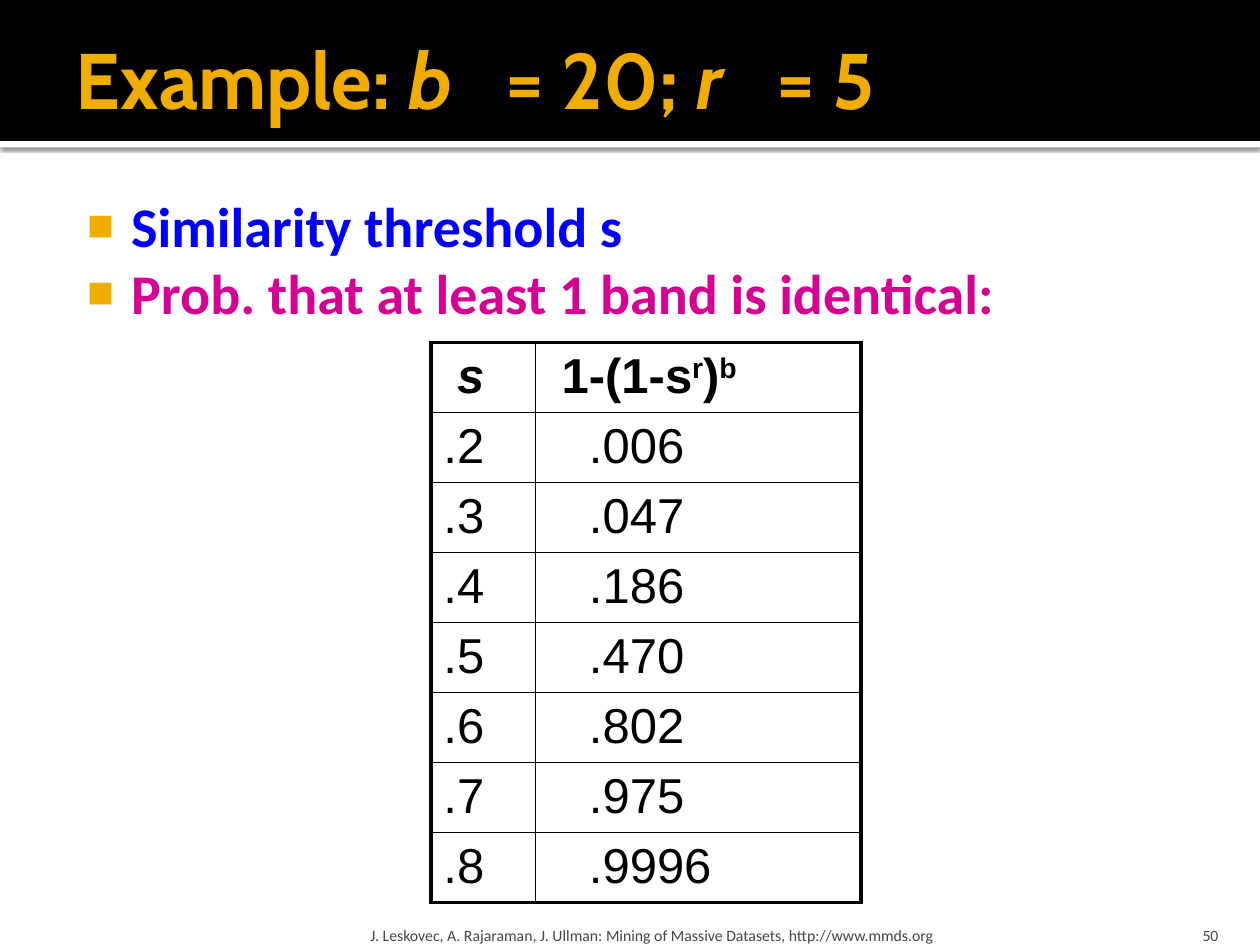
from lxml import etree
from pptx import Presentation
from pptx.dml.color import RGBColor
from pptx.enum import shapes, text
from pptx.oxml.ns import qn
from pptx.util import Pt

GOLD = RGBColor(0xF0, 0xAD, 0x00)
BLUE = RGBColor(0x00, 0x00, 0xFF)
MAGENTA = RGBColor(0xD6, 0x00, 0x93)
GRAY = RGBColor(0x45, 0x45, 0x45)
BLACK = RGBColor(0x00, 0x00, 0x00)
WHITE = RGBColor(0xFF, 0xFF, 0xFF)

HEADING = [("Example: ", False), ("b", True), (" ", False), (" = 20; ", False),
           ("r", True), (" ", False), (" = 5", False)]
HEADING_GAP = 10
BULLETS = [("Similarity threshold s", BLUE),
           ("Prob. that at least 1 band is identical:", MAGENTA)]
FORMULA = [("1-(1-s", False), ("r", True), (")", False), ("b", True)]
PROBABILITIES = [(".2", ".006"), (".3", ".047"), (".4", ".186"), (".5", ".470"),
                 (".6", ".802"), (".7", ".975"), (".8", ".9996")]
FOOTERS = [("J. Leskovec, A. Rajaraman, J. Ullman: Mining of Massive Datasets, "
            "http://www.mmds.org", 208, 433.5, 3.6, text.PP_ALIGN.LEFT),
           ("50", 645.8, 57.6, 7.2, text.PP_ALIGN.RIGHT)]

BAND_HEIGHT, STRIP_HEIGHT = 80.6, 3.6
TABLE_LEFT, TABLE_TOP, ROW_HEIGHT = 246.2, 195.8, 40
COLUMN_WIDTHS = (59.8, 186)
CELL_MARGIN, INDENT_STEP = 7.2, 7.8
THIN, THICK = 1, 2.25


def place(part, left, top, width, height):
    part.left, part.top, part.width, part.height = map(Pt, (left, top, width, height))


def set_frame(frame, anchor, left, top, right, bottom):
    frame.word_wrap = True
    frame.auto_size = text.MSO_AUTO_SIZE.NONE
    frame.vertical_anchor = anchor
    frame.margin_left, frame.margin_top = Pt(left), Pt(top)
    frame.margin_right, frame.margin_bottom = Pt(right), Pt(bottom)


def set_font(font, name, size, color, bold=False):
    font.name, font.size, font.bold = name, Pt(size), bold
    font.color.rgb = color


def add_bar(slide, top, height, color, depth):
    bar = slide.shapes.add_shape(shapes.MSO_SHAPE.RECTANGLE, 0, Pt(top), Pt(720), Pt(height))
    bar.shadow.inherit = False
    bar.fill.solid()
    bar.fill.fore_color.rgb = color
    bar.line.fill.background()
    slide.shapes._spTree.insert(2 + depth, bar._element)
    return bar


def add_drop_shadow(bar):
    effects = bar._element.spPr.find(qn("a:effectLst"))
    shadow = etree.SubElement(effects, qn("a:outerShdw"), blurRad=str(Pt(2.5)),
                              dist=str(Pt(0.8)), dir="5400000", rotWithShape="0")
    color = etree.SubElement(shadow, qn("a:srgbClr"), val=str(BLACK))
    etree.SubElement(color, qn("a:alpha"), val="60000")


def add_square_bullet(paragraph):
    properties = paragraph._p.get_or_add_pPr()
    properties.set("marL", str(Pt(34.6)))
    properties.set("indent", str(Pt(-25.2)))
    color = etree.SubElement(properties, qn("a:buClr"))
    etree.SubElement(color, qn("a:srgbClr"), val=str(GOLD))
    etree.SubElement(properties, qn("a:buSzPct"), val="80000")
    etree.SubElement(properties, qn("a:buFont"), typeface="Arial")
    etree.SubElement(properties, qn("a:buChar"), char="■")


def add_borders(cell, widths):
    properties = cell._tc.get_or_add_tcPr()
    for position, (side, width) in enumerate(widths.items()):
        line = etree.Element(qn(f"a:{side}"), w=str(Pt(width)))
        fill = etree.SubElement(line, qn("a:solidFill"))
        etree.SubElement(fill, qn("a:srgbClr"), val=str(BLACK))
        properties.insert(position, line)


def fill_heading(title):
    place(title, 36, 5.8, 648, 77.8)
    set_frame(title.text_frame, text.MSO_ANCHOR.MIDDLE, 7.2, 3.6, 3.6, 3.6)
    paragraph = title.text_frame.paragraphs[0]
    paragraph.alignment = text.PP_ALIGN.LEFT
    set_font(paragraph.font, "Cabin", 45, GOLD, bold=True)
    for words, italic in HEADING:
        run = paragraph.add_run()
        run.text, run.font.italic = words, italic
        if words == " ":
            run._r.get_or_add_rPr().set("spc", str(HEADING_GAP * 100))


def fill_bullets(body):
    place(body, 36, 102.2, 648, 414)
    set_frame(body.text_frame, text.MSO_ANCHOR.TOP, 4.3, 7.2, 7.2, 3.6)
    body.text_frame.text = "\n".join(words for words, _ in BULLETS)
    for paragraph, (_, color) in zip(body.text_frame.paragraphs, BULLETS):
        paragraph.space_before = Pt(0)
        set_font(paragraph.font, "Calibri", 32, color, bold=True)
        add_square_bullet(paragraph)


def add_probability_table(slide):
    rows = [("s", FORMULA)] + PROBABILITIES
    last = len(rows) - 1
    table = slide.shapes.add_table(len(rows), 2, Pt(TABLE_LEFT), Pt(TABLE_TOP),
                                   Pt(sum(COLUMN_WIDTHS)), Pt(ROW_HEIGHT * len(rows))).table
    table.first_row = table.horz_banding = False
    for column, width in zip(table.columns, COLUMN_WIDTHS):
        column.width = Pt(width)
    for r, row in enumerate(rows):
        table.rows[r].height = Pt(ROW_HEIGHT)
        header = r == 0
        for c, content in enumerate(row):
            cell = table.cell(r, c)
            cell.fill.background()
            indent = 1 if header else 3 * c
            cell.margin_left = Pt(CELL_MARGIN + indent * INDENT_STEP)
            paragraph = cell.text_frame.paragraphs[0]
            set_font(paragraph.font, "Arial", 28, BLACK, bold=header)
            paragraph.font.italic = header and c == 0
            pieces = [(content, False)] if isinstance(content, str) else content
            for words, raised in pieces:
                run = paragraph.add_run()
                run.text = words
                if raised:
                    run._r.get_or_add_rPr().set("baseline", "30000")
            add_borders(cell, {"lnL": THICK if c == 0 else THIN,
                               "lnR": THICK if c == 1 else THIN,
                               "lnT": THICK if header else THIN,
                               "lnB": THICK if r == last else THIN})


def add_footers(slide):
    for words, left, width, margin, alignment in FOOTERS:
        footer = slide.shapes.add_textbox(Pt(left), Pt(518.4), Pt(width), Pt(21.6))
        set_frame(footer.text_frame, text.MSO_ANCHOR.BOTTOM, margin, 3.6, margin, 0)
        paragraph = footer.text_frame.paragraphs[0]
        paragraph.text, paragraph.alignment = words, alignment
        set_font(paragraph.font, "Calibri", 9, GRAY)


def main():
    deck = Presentation()
    deck.slide_width, deck.slide_height = Pt(720), Pt(540)
    slide = deck.slides.add_slide(deck.slide_layouts[1])
    add_drop_shadow(add_bar(slide, BAND_HEIGHT, STRIP_HEIGHT, WHITE, 0))
    add_bar(slide, 0, BAND_HEIGHT, BLACK, 1)
    fill_heading(slide.shapes.title)
    fill_bullets(slide.placeholders[1])
    add_footers(slide)
    add_probability_table(slide)
    deck.save("out.pptx")


if __name__ == "__main__":
    main()
